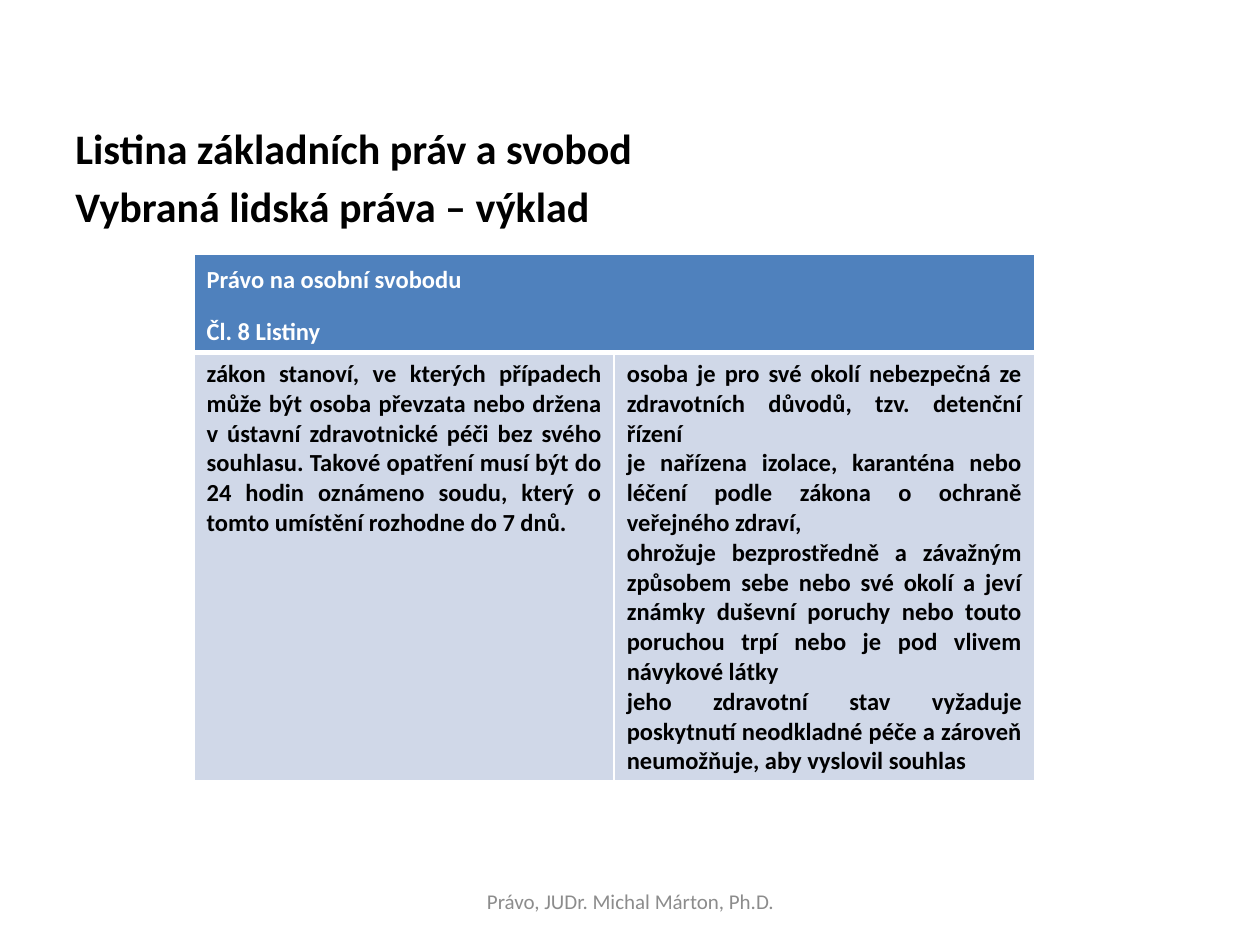
from lxml.etree import SubElement
from pptx import Presentation
from pptx.dml.color import RGBColor
from pptx.enum.text import MSO_ANCHOR, PP_ALIGN
from pptx.oxml.ns import qn
from pptx.util import Inches, Pt

COLORS = {"ink": "000000", "paper": "FFFFFF", "header": "4F81BD", "body": "D0D8E8", "footer": "8C8C8C"}
HEADINGS = ["Listina základních práv a svobod", "Vybraná lidská práva – výklad"]
RIGHT_TITLE = ["Právo na osobní svobodu", "Čl. 8 Listiny"]
LAW = [
    "zákon stanoví, ve kterých případech může být osoba převzata nebo držena v ústavní zdravotnické péči "
    "bez svého souhlasu. Takové opatření musí být do 24 hodin oznámeno soudu, který o tomto umístění "
    "rozhodne do 7 dnů."
]
CASES = [
    "osoba je pro své okolí nebezpečná ze zdravotních důvodů, tzv. detenční řízení",
    "je nařízena izolace, karanténa nebo léčení podle zákona o ochraně veřejného zdraví,",
    "ohrožuje bezprostředně a závažným způsobem sebe nebo své okolí a jeví známky duševní poruchy "
    "nebo touto poruchou trpí nebo je pod vlivem návykové látky",
    "jeho zdravotní stav vyžaduje poskytnutí neodkladné péče a zároveň neumožňuje, aby vyslovil souhlas",
]
FOOTER = ["Právo, JUDr. Michal Márton, Ph.D."]


class LawSlide:
    """Holds the style and the current slide, placed on a grid of 100 columns by 75 rows."""

    font = "Calibri"

    def __init__(self, deck):
        self.slide = deck.slides.add_slide(deck.slide_layouts[6])
        self.column = deck.slide_width / 100
        self.row = deck.slide_height / 75

    def place(self, left, top, width, height):
        return (round(left * self.column), round(top * self.row),
                round(width * self.column), round(height * self.row))

    def paragraphs(self, frame, lines, size, color, bold=True, align=PP_ALIGN.LEFT,
                   before=0, after=0, spacing=1.0):
        frame.word_wrap = True
        for index, line in enumerate(lines):
            paragraph = frame.add_paragraph() if index else frame.paragraphs[0]
            paragraph.alignment = align
            paragraph.space_before = Pt(before if index else 0)
            paragraph.space_after = Pt(after)
            paragraph.line_spacing = spacing
            run = paragraph.add_run()
            run.text = line
            run.font.name = self.font
            run.font.size = Pt(size)
            run.font.bold = bold
            run.font.color.rgb = RGBColor.from_string(COLORS[color])

    def text(self, box, lines, size, color, anchor=MSO_ANCHOR.TOP, **style):
        frame = self.slide.shapes.add_textbox(*self.place(*box)).text_frame
        frame.vertical_anchor = anchor
        self.paragraphs(frame, lines, size, color, **style)

    def borders(self, cell, widths):
        properties = cell._tc.get_or_add_tcPr()
        for position, (side, width) in enumerate(widths.items()):
            line = SubElement(properties, qn(f"a:ln{side}"), w=str(Pt(width)))
            fill = SubElement(line, qn("a:solidFill"))
            SubElement(fill, qn("a:srgbClr"), val=COLORS["paper"])
            properties.insert(position, line)

    def table(self, box, row_heights, header, body):
        table = self.slide.shapes.add_table(len(row_heights), len(body), *self.place(*box)).table
        for row, height in zip(table.rows, row_heights):
            row.height = round(height * self.row)
        for r, fill in enumerate(("header", "body")):
            for cell in table.rows[r].cells:
                cell.fill.solid()
                cell.fill.fore_color.rgb = RGBColor.from_string(COLORS[fill])
                self.borders(cell, {"L": 1, "R": 1, "T": 1 if r == 0 else 3, "B": 3 if r == 0 else 1})
        table.cell(0, 0).merge(table.cell(0, len(body) - 1))
        self.paragraphs(table.cell(0, 0).text_frame, header, 14, "paper",
                        align=PP_ALIGN.JUSTIFY, after=10, spacing=1.15)
        for cell, lines in zip(table.rows[1].cells, body):
            self.paragraphs(cell.text_frame, lines, 14, "ink", align=PP_ALIGN.JUSTIFY)


def main():
    deck = Presentation()
    deck.slide_width, deck.slide_height = Inches(10), Inches(7.5)
    page = LawSlide(deck)
    page.text((5, 9.2, 90, 57.8), HEADINGS, 24, "ink", before=4.8)
    page.text((34.2, 69.5, 31.7, 4), FOOTER, 12, "footer", MSO_ANCHOR.MIDDLE,
              bold=False, align=PP_ALIGN.CENTER)
    page.table((15.4, 20.2, 66.7, 41.8), (7.8, 34), RIGHT_TITLE, [LAW, CASES])
    deck.save("out.pptx")


if __name__ == "__main__":
    main()
